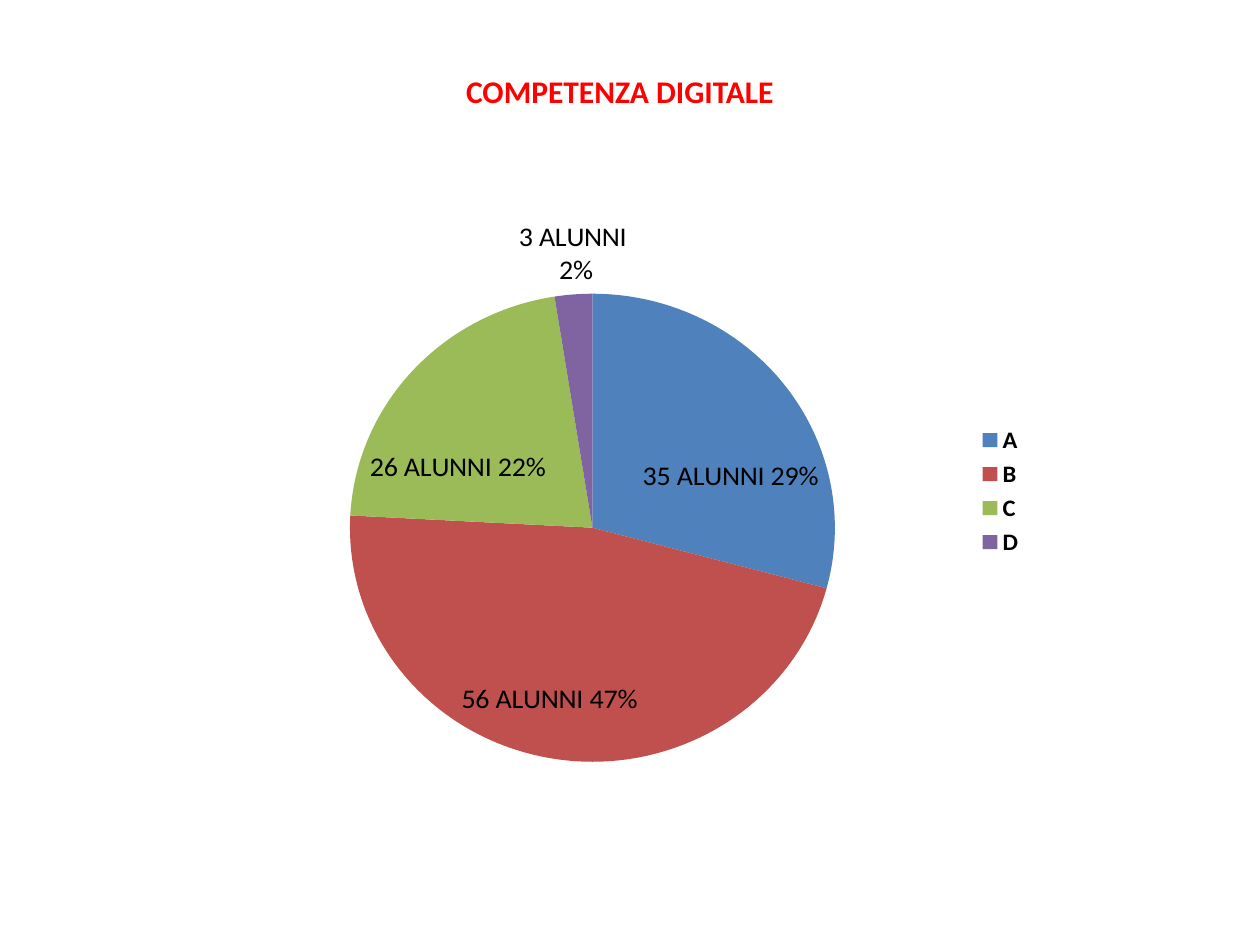
from dataclasses import dataclass

from lxml.etree import SubElement
from pptx import Presentation
from pptx.chart.data import CategoryChartData
from pptx.dml.color import RGBColor
from pptx.enum.chart import XL_CHART_TYPE as ChartType
from pptx.enum.chart import XL_LABEL_POSITION as LabelPosition
from pptx.enum.chart import XL_LEGEND_POSITION as LegendPosition
from pptx.enum.text import MSO_ANCHOR as Anchor
from pptx.enum.text import PP_ALIGN as Align
from pptx.oxml.ns import qn
from pptx.util import Pt

PX = 914400 / 126
FONT = "Calibri"
COLORS = {
    "title": "FF0000",
    "text": "000000",
    "A": "4F81BD",
    "B": "C0504D",
    "C": "9BBB59",
    "D": "8064A2",
}


@dataclass(frozen=True)
class Box:
    left: int
    top: int
    width: int
    height: int

    def emu(self) -> tuple[int, ...]:
        return tuple(round(n * PX) for n in (self.left, self.top, self.width, self.height))


@dataclass(frozen=True)
class Grade:
    name: str
    pupils: int
    label: str
    shift: tuple[int, int] | None = None


TITLE = Box(273, 66, 694, 50)
CHART = Box(184, 204, 853, 595)
PIE = Box(166, 93, 485, 485)
GRADES = [
    Grade("A", 35, "35 ALUNNI 29%", (-148, 116)),
    Grade("B", 56, "56 ALUNNI 47%", (84, -86)),
    Grade("C", 26, "26 ALUNNI 22%", (139, 122)),
    Grade("D", 3, "3 ALUNNI\n 2%"),
]


def style(font, size: int, color: str, bold: bool) -> None:
    """Apply the slide's typeface with a size, colour and weight."""
    font.name, font.size, font.bold = FONT, Pt(size), bold
    font.color.rgb = RGBColor.from_string(COLORS[color])


def add_layout(parent, position: int, settings: dict) -> None:
    """Insert a manual chart layout into an element."""
    layout = SubElement(parent, qn("c:layout"))
    parent.insert(position, layout)
    manual = SubElement(layout, qn("c:manualLayout"))
    for tag, value in settings.items():
        SubElement(manual, qn(f"c:{tag}")).set("val", str(value))


def add_title(slide, text: str) -> None:
    """Place the heading in the title placeholder."""
    title = slide.shapes.title
    title.left, title.top, title.width, title.height = TITLE.emu()
    frame = title.text_frame
    frame.vertical_anchor = Anchor.MIDDLE
    heading = frame.paragraphs[0]
    heading.alignment = Align.CENTER
    run = heading.add_run()
    run.text = text
    style(run.font, 18, "title", True)


def format_slice(point, grade: Grade) -> None:
    """Colour one slice and write its label."""
    point.format.fill.solid()
    point.format.fill.fore_color.rgb = RGBColor.from_string(COLORS[grade.name])
    point.format.line.fill.background()
    label = point.data_label
    frame = label.text_frame
    frame.word_wrap = False
    for number, line in enumerate(grade.label.split("\n")):
        paragraph = frame.add_paragraph() if number else frame.paragraphs[0]
        run = paragraph.add_run()
        run.text = line
        style(run.font, 16, "text", False)
    label.position = LabelPosition.BEST_FIT if grade.shift else LabelPosition.OUTSIDE_END


def add_pie(slide, grades: list[Grade]) -> None:
    """Draw the pie of pupils per grade with its legend."""
    data = CategoryChartData()
    data.categories = [grade.name for grade in grades]
    data.add_series("Series 1", [grade.pupils for grade in grades])
    chart = slide.shapes.add_chart(ChartType.PIE, *CHART.emu(), data).chart
    style(chart.font, 10, "text", False)
    chart.has_title = False
    chart.has_legend = True
    chart.legend.position = LegendPosition.RIGHT
    chart.legend.include_in_layout = False
    style(chart.legend.font, 14, "text", True)

    plot = chart.plots[0]
    plot.vary_by_categories = True
    series = plot.series[0]
    labels = series.data_labels
    labels.show_value = labels.show_percentage = True
    style(labels.font, 16, "text", True)
    for index, grade in enumerate(grades):
        format_slice(series.points[index], grade)

    for element, grade in zip(chart.element.xpath(".//c:dLbl"), grades):
        if grade.shift:
            across, down = grade.shift
            add_layout(element, 1, {"x": across / CHART.width, "y": down / CHART.height})
    area = chart.element.xpath(".//c:plotArea")[0]
    for automatic in area.findall(qn("c:layout")):
        area.remove(automatic)
    add_layout(area, 0, {
        "layoutTarget": "inner",
        "xMode": "edge",
        "yMode": "edge",
        "x": PIE.left / CHART.width,
        "y": PIE.top / CHART.height,
        "w": PIE.width / CHART.width,
        "h": PIE.height / CHART.height,
    })


def main() -> None:
    """Build and save the slide."""
    deck = Presentation()
    deck.slide_width, deck.slide_height = round(1260 * PX), round(945 * PX)
    slide = deck.slides.add_slide(deck.slide_layouts[5])
    add_title(slide, "COMPETENZA DIGITALE")
    add_pie(slide, GRADES)
    deck.save("out.pptx")


if __name__ == "__main__":
    main()
